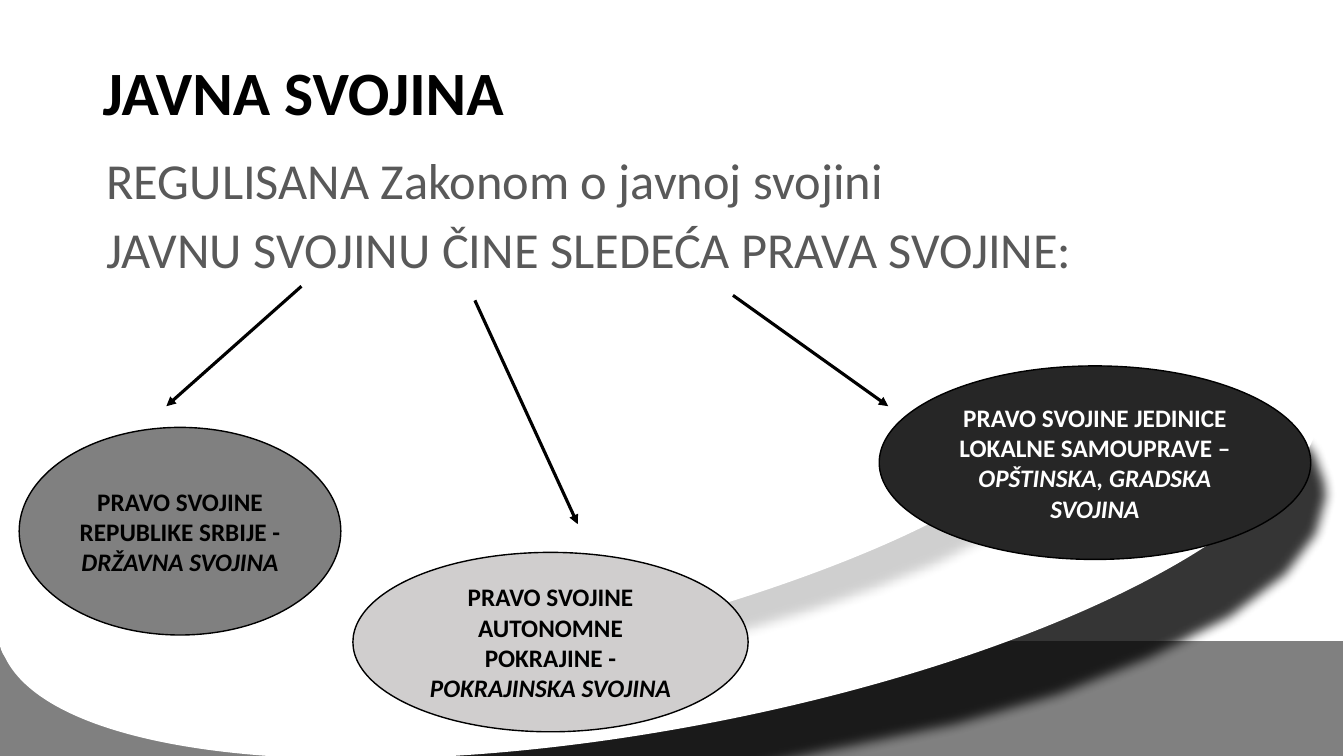
import pptx
import pptx.util
import pptx.dml.color
import pptx.enum.shapes
import pptx.enum.text
import pptx.oxml
import pptx.oxml.ns
import lxml.etree

Inches = pptx.util.Inches
Pt = pptx.util.Pt
SHAPES = pptx.enum.shapes.MSO_SHAPE
ANCHOR = pptx.enum.text.MSO_ANCHOR
qn = pptx.oxml.ns.qn


def paint(color_format, color):
    """Colour a fill, a line's fill or a font from a hex string."""
    if hasattr(color_format, "solid"):
        color_format.solid()
        color_format = color_format.fore_color
    color_format.rgb = pptx.dml.color.RGBColor.from_string(color)


def add_plain_shape(kind, left, top, width, height, color):
    shape = page.shapes.add_shape(kind, Inches(left), Inches(top), Inches(width), Inches(height))
    shape.shadow.inherit = False
    paint(shape.fill, color)
    shape.line.fill.background()
    return shape


deck = pptx.Presentation()
deck.slide_width = Inches(13.33)
deck.slide_height = Inches(7.5)
page = deck.slides.add_slide(deck.slide_layouts[6])

# Background: grey floor and two tilted white discs, each over a soft crescent
add_plain_shape(SHAPES.RECTANGLE, -0.01, 6.36, 13.33, 1.21, "808080")

dark_crescent = [
    (12.9, 4.15), (13.13, 4.4), (13.24, 4.7), (13.26, 5), (13.15, 5.4), (12.85, 5.8),
    (12.3, 6.22), (11.5, 6.63), (10.6, 6.99), (9.6, 7.28), (8.3, 7.55), (7.4, 7.75),
    (3, 7.75), (4.4, 7.2), (8, 6.5), (11, 5.3), (12.4, 4.3),
]
pale_crescent = [
    (3.1, 6.88), (5, 6.8), (6.5, 6.57), (7.5, 6.35), (8.2, 6.14), (8.8, 5.93), (9.4, 5.69),
    (9.9, 5.43), (10.6, 4.95), (10.5, 4.3), (9.5, 4.5), (7, 5.6), (4.5, 6.3),
]
discs = [
    (dark_crescent, 79, (-0.12, 3.02, 13.32, 4.21), 169.4),
    (pale_crescent, 19, (-0.13, 4, 10.69, 2.47), 167.3),
]
for outline, opacity, place, angle in discs:
    points = [(Inches(x), Inches(y)) for x, y in outline]
    builder = page.shapes.build_freeform(*points[0])
    builder.add_line_segments(points[1:], close=True)
    crescent = builder.convert_to_shape()
    crescent.shadow.inherit = False
    paint(crescent.fill, "000000")
    crescent.line.fill.background()
    properties = crescent.element.spPr
    fill_color = properties.find(qn("a:solidFill")).find(qn("a:srgbClr"))
    lxml.etree.SubElement(fill_color, qn("a:alpha"), val=str(opacity * 1000))
    effects = properties.find(qn("a:effectLst"))
    lxml.etree.SubElement(effects, qn("a:softEdge"), rad=str(Inches(0.12)))

    disc = add_plain_shape(SHAPES.OVAL, *place, "FFFFFF")
    disc.rotation = angle

# Title and introduction
texts = [
    (0.92, 0.61, 0.68, ANCHOR.MIDDLE, 44, True, "000000", ["JAVNA SVOJINA"]),
    (0.96, 1.5, 5.14, ANCHOR.TOP, 36, False, "595959",
     ["REGULISANA Zakonom o javnoj svojini", "JAVNU SVOJINU ČINE SLEDEĆA PRAVA SVOJINE:"]),
]
for left, top, height, anchor, size, bold, color, lines in texts:
    box = page.shapes.add_textbox(Inches(left), Inches(top), Inches(11.5), Inches(height))
    frame = box.text_frame
    frame.word_wrap = True
    frame.vertical_anchor = anchor
    frame.text = "\n".join(lines)
    for number, para in enumerate(frame.paragraphs):
        para.line_spacing = 0.9
        if number:
            para.space_before = Pt(10)
        para.font.name = "Calibri"
        para.font.size = Pt(size)
        para.font.bold = bold
        paint(para.font.color, color)

# Arrows to the three kinds of ownership
for ends in [(2.99, 2.84, 1.65, 4.03), (4.71, 2.98, 5.73, 5.2), (7.27, 2.93, 8.81, 4.03)]:
    arrow = page.shapes.add_connector(
        pptx.enum.shapes.MSO_CONNECTOR.STRAIGHT, *[Inches(value) for value in ends])
    paint(arrow.line.fill, "000000")
    arrow.line.width = Pt(2.25)
    lxml.etree.SubElement(arrow.line._get_or_add_ln(), qn("a:tailEnd"), type="triangle")
    lxml.etree.SubElement(arrow._element.spPr, qn("a:effectLst"))

ownerships = [
    ((0.19, 4.24, 3.19, 2.06), "808080", "000000",
     "PRAVO SVOJINE REPUBLIKE SRBIJE - ", "DRŽAVNA SVOJINA"),
    ((3.5, 5.48, 3.92, 1.78), "D0CECE", "000000",
     "PRAVO SVOJINE AUTONOMNE POKRAJINE - ", "POKRAJINSKA SVOJINA"),
    ((8.72, 3.63, 4.28, 1.92), "262626", "FFFFFF",
     "PRAVO SVOJINE JEDINICE LOKALNE SAMOUPRAVE – ", "OPŠTINSKA, GRADSKA SVOJINA"),
]
for place, fill, color, holder, kind in ownerships:
    oval = add_plain_shape(SHAPES.OVAL, *place, fill)
    paint(oval.line.fill, "000000")
    oval.line.width = Pt(1)
    frame = oval.text_frame
    frame.word_wrap = True
    frame.vertical_anchor = ANCHOR.MIDDLE
    para = frame.paragraphs[0]
    para.alignment = pptx.enum.text.PP_ALIGN.CENTER
    para.font.name = "Calibri"
    para.font.size = Pt(18)
    para.font.bold = True
    paint(para.font.color, color)
    para.add_run().text = holder
    span = para.add_run()
    span.text = kind
    span.font.italic = True

deck.save("out.pptx")
